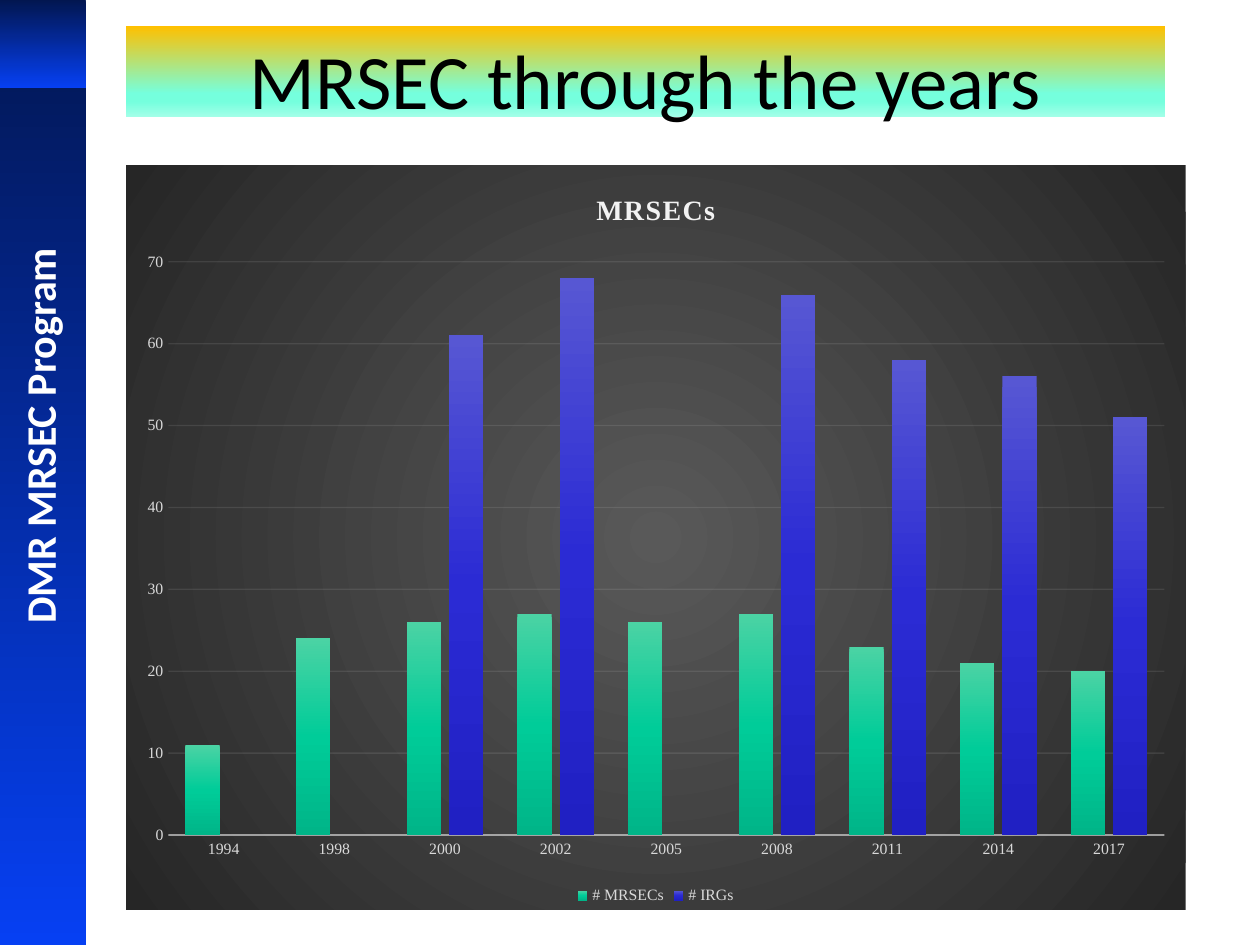
from lxml import etree
from pptx import Presentation
from pptx.chart.data import CategoryChartData
from pptx.dml.color import RGBColor
from pptx.enum.chart import XL_CHART_TYPE, XL_LEGEND_POSITION, XL_TICK_MARK
from pptx.enum.shapes import MSO_SHAPE
from pptx.enum.text import MSO_ANCHOR, MSO_AUTO_SIZE, PP_ALIGN
from pptx.oxml import parse_xml
from pptx.oxml.ns import nsdecls, qn
from pptx.util import Inches, Pt

YEARS = ["1994", "1998", "2000", "2002", "2005", "2008", "2011", "2014", "2017"]
SERIES = {
    "# MRSECs": [11, 24, 26, 27, 26, 27, 23, 21, 20],
    "# IRGs": [None, None, 61, 68, None, 66, 58, 56, 51],
}
DOWN = '<a:lin ang="5400000" scaled="0"/>'
CENTRE = '<a:path path="circle"><a:fillToRect l="50000" t="50000" r="50000" b="50000"/></a:path>'
BLUE = [(0, "021650"), (100, "0640F3")]
TITLE_FILL = [(0, "FFC000"), (74, "75FFDD"), (83, "75FFDD"), (100, "A3FFE8")]
CHART_FILL = [(0, "595959"), (100, "262626")]
SERIES_FILLS = [
    [(0, "4BD3A4"), (50, "00CC99"), (100, "00B588")],
    [(0, "5757D3"), (50, "2B2BD4"), (100, "2020C3")],
]


def rgb(color):
    return RGBColor.from_string(color)


def set_font(font, name, size, color, bold=False):
    font.name, font.size, font.bold = name, Pt(size), bold
    font.color.rgb = rgb(color)


def set_gradient(fill, sp_pr, stops, direction=DOWN):
    fill.solid()
    gs = "".join(
        f'<a:gs pos="{pos * 1000}"><a:srgbClr val="{color}"/></a:gs>' for pos, color in stops
    )
    grad = f'<a:gradFill {nsdecls("a")} rotWithShape="1"><a:gsLst>{gs}</a:gsLst>{direction}</a:gradFill>'
    sp_pr.replace(sp_pr.find(qn("a:solidFill")), parse_xml(grad))


def set_line(line, color, width, opacity):
    line.color.rgb = rgb(color)
    line.width = Pt(width)
    clr = line._get_or_add_ln().find(".//" + qn("a:srgbClr"))
    etree.SubElement(clr, qn("a:alpha")).set("val", str(opacity * 1000))


def add_sidebar(slide, left, top, width, height):
    for part_height in (height, Inches(0.7)):
        sp = slide.shapes.add_shape(MSO_SHAPE.RECTANGLE, left, top, width, part_height)
        sp.shadow.inherit = False
        sp.line.fill.background()
        set_gradient(sp.fill, sp.element.spPr, BLUE)
    label = slide.shapes.add_textbox(
        left - Inches(2.25), top + Inches(2.23), Inches(5.13), Inches(0.51)
    )
    label.rotation = 270
    tf = label.text_frame
    tf.word_wrap = True
    p = tf.paragraphs[0]
    p.text = "DMR MRSEC Program"
    set_font(p.font, "Calibri", 24, "FFFFFF", True)


def place_title(slide, left, top, width, height):
    title = slide.shapes.title
    title.left, title.top, title.width, title.height = left, top, width, height
    set_gradient(title.fill, title.element.spPr, TITLE_FILL)
    tf = title.text_frame
    tf.auto_size = MSO_AUTO_SIZE.NONE
    tf.vertical_anchor = MSO_ANCHOR.TOP
    p = tf.paragraphs[0]
    p.text = "MRSEC through the years"
    p.alignment = PP_ALIGN.CENTER
    set_font(p.font, "Calibri", 44, "000000")


def style_axes(chart):
    for axis in (chart.category_axis, chart.value_axis):
        axis.major_tick_mark = axis.minor_tick_mark = XL_TICK_MARK.NONE
        set_font(axis.tick_labels.font, "Times New Roman", 9, "D9D9D9")
    set_line(chart.category_axis.format.line, "F2F2F2", 1, 54)
    values = chart.value_axis
    values.minimum_scale, values.maximum_scale, values.major_unit = 0, 70, 10
    values.format.line.fill.background()
    set_line(values.major_gridlines.format.line, "F2F2F2", 0.75, 10)


def set_plot_layout(chart, **box):
    area = chart.element.find(".//" + qn("c:plotArea"))
    for old in area.findall(qn("c:layout")):
        area.remove(old)
    parts = '<c:layoutTarget val="inner"/><c:xMode val="edge"/><c:yMode val="edge"/>'
    parts += "".join(f'<c:{key} val="{value}"/>' for key, value in box.items())
    xml = f'<c:layout {nsdecls("c")}><c:manualLayout>{parts}</c:manualLayout></c:layout>'
    area.insert(0, parse_xml(xml))


def add_column_chart(slide, left, top, width, height):
    data = CategoryChartData()
    data.categories = YEARS
    for name, values in SERIES.items():
        data.add_series(name, values)
    chart = slide.shapes.add_chart(
        XL_CHART_TYPE.COLUMN_CLUSTERED, left, top, width, height, data
    ).chart
    set_font(chart.font, "Times New Roman", 10, "000000")

    sp_pr = parse_xml(f'<c:spPr {nsdecls("a", "c")}><a:solidFill/></c:spPr>')
    chart.element.find(qn("c:txPr")).addprevious(sp_pr)
    grad_format = chart.plots[0].series[0].format.fill.from_fill_parent(sp_pr)
    set_gradient(grad_format, sp_pr, CHART_FILL, CENTRE)

    chart.has_title = True
    p = chart.chart_title.text_frame.paragraphs[0]
    p.text = "MRSECs"
    set_font(p.font, "Times New Roman", 16, "F2F2F2", True)
    p.runs[0].font._element.set("spc", "100")

    plot = chart.plots[0]
    plot.gap_width, plot.overlap, plot.vary_by_categories = 100, -24, False
    for series, stops in zip(plot.series, SERIES_FILLS):
        fill = series.format.fill
        set_gradient(fill, series._element.spPr, stops)

    style_axes(chart)
    set_plot_layout(chart, x=0.04, y=0.13, w=0.94, h=0.77)
    chart.has_legend = True
    chart.legend.position = XL_LEGEND_POSITION.BOTTOM
    chart.legend.include_in_layout = False
    set_font(chart.legend.font, "Times New Roman", 9, "D9D9D9")


def main():
    prs = Presentation()
    prs.slide_width, prs.slide_height = Inches(10), Inches(7.5)
    slide = prs.slides.add_slide(prs.slide_layouts[5])
    add_sidebar(slide, 0, 0, Inches(0.68), prs.slide_height)
    place_title(slide, Inches(1), Inches(0.21), Inches(8.25), Inches(0.72))
    add_column_chart(slide, Inches(1), Inches(1.31), Inches(8.41), Inches(5.91))
    prs.save("out.pptx")


if __name__ == "__main__":
    main()
